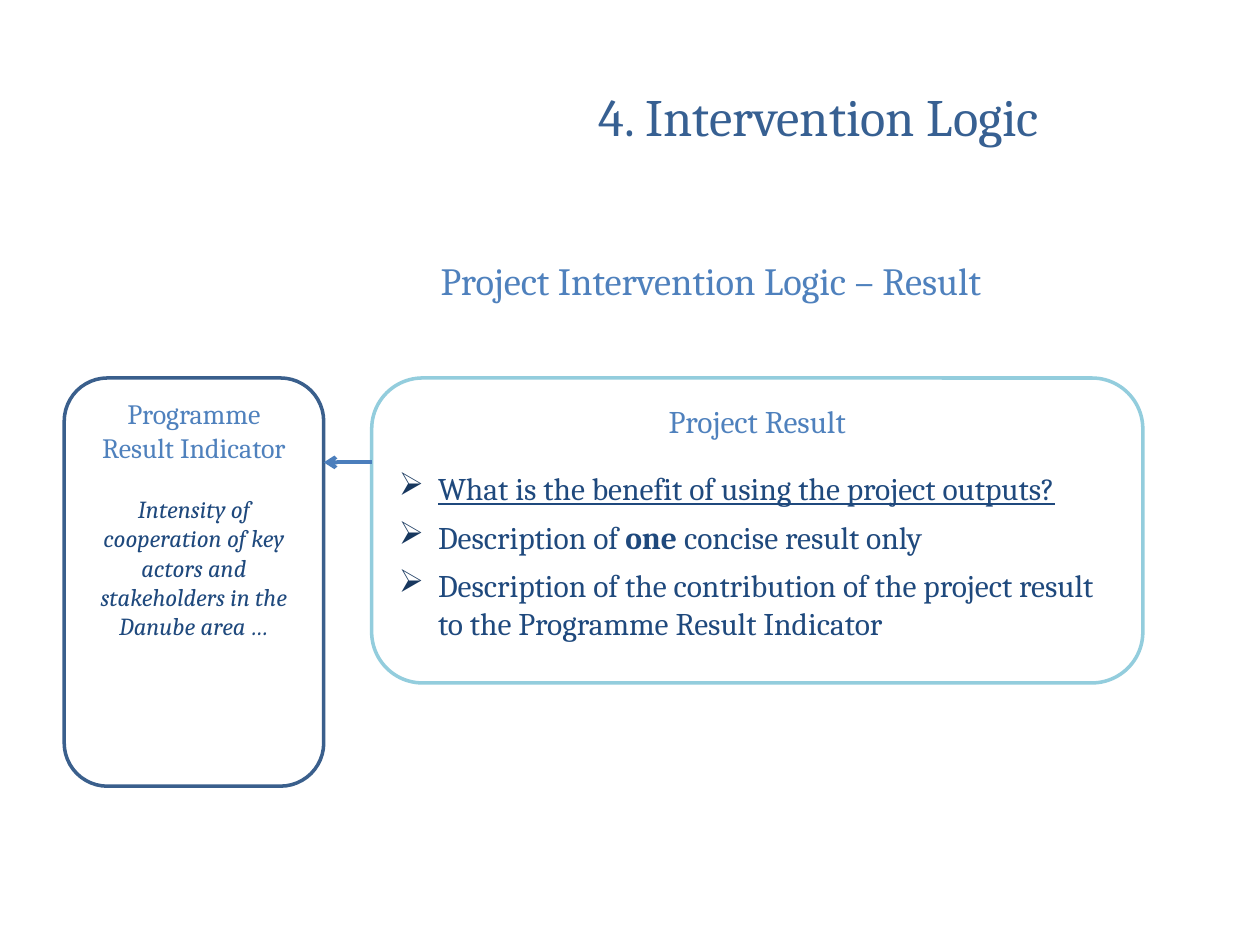
"""Build the Intervention Logic slide on project results."""
from lxml.etree import SubElement
from pptx import Presentation
from pptx.dml.color import RGBColor
from pptx.enum.shapes import MSO_CONNECTOR, MSO_SHAPE
from pptx.enum.text import MSO_ANCHOR, PP_ALIGN
from pptx.oxml.ns import qn
from pptx.util import Inches, Pt

WHITE = RGBColor(0xFF, 0xFF, 0xFF)
BLUE = RGBColor(0x4F, 0x81, 0xBD)
TITLE_BLUE = RGBColor(0x37, 0x60, 0x92)
NAVY = RGBColor(0x1F, 0x49, 0x7D)
INDICATOR_LINE = RGBColor(0x3A, 0x5F, 0x8C)
RESULT_LINE = RGBColor(0x93, 0xCD, 0xDD)
ARROW_BLUE = RGBColor(0x4B, 0x7E, 0xBC)
BULLET_COLOR = "17375E"


def add_span(para, text, size, color):
    span = para.add_run()
    span.text = text
    span.font.name = "Cambria"
    span.font.size = Pt(size)
    span.font.color.rgb = color
    return span


def add_panel(page, left, width, height, line_color):
    panel = page.shapes.add_shape(
        MSO_SHAPE.ROUNDED_RECTANGLE, Inches(left), Inches(3), Inches(width), Inches(height))
    panel.shadow.inherit = False
    panel.fill.solid()
    panel.fill.fore_color.rgb = WHITE
    tint = panel.fill._xPr.find(qn("a:solidFill"))[0]
    SubElement(tint, qn("a:alpha"), val="59000")
    panel.line.color.rgb = line_color
    panel.line.width = Pt(2)
    panel.text_frame.word_wrap = True
    panel.text_frame.vertical_anchor = MSO_ANCHOR.TOP
    return panel.text_frame


deck = Presentation()
deck.slide_width, deck.slide_height = Inches(10), Inches(7.5)
page = deck.slides.add_slide(deck.slide_layouts[6])

headings = [
    ("4. Intervention Logic", 3.76, 0.6, 5.48, 0.63, 30, TITLE_BLUE),
    ("Project Intervention Logic – Result ", 2.74, 1.99, 5.87, 0.47, 22, BLUE),
]
for text, left, top, width, height, size, color in headings:
    box = page.shapes.add_textbox(Inches(left), Inches(top), Inches(width), Inches(height))
    box.text_frame.word_wrap = True
    box.text_frame.vertical_anchor = MSO_ANCHOR.MIDDLE
    para = box.text_frame.paragraphs[0]
    para.alignment = PP_ALIGN.CENTER
    add_span(para, text, size, color)

indicator = add_panel(page, 0.51, 2.06, 3.24, INDICATOR_LINE)
para = indicator.paragraphs[0]
para.alignment = PP_ALIGN.CENTER
add_span(para, "Programme", 16, BLUE)
para = indicator.add_paragraph()
para.alignment = PP_ALIGN.CENTER
para.space_after = Pt(17)
add_span(para, "Result Indicator", 16, BLUE)
para = indicator.add_paragraph()
para.alignment = PP_ALIGN.CENTER
span = add_span(
    para, "Intensity of cooperation of key actors and stakeholders in the Danube area …", 14, NAVY)
span.font.italic = True

result = add_panel(page, 2.95, 6.12, 2.42, RESULT_LINE)
result.margin_top = Inches(0.07)
para = result.paragraphs[0]
para.alignment = PP_ALIGN.CENTER
para.space_after = Pt(17)
add_span(para, "Project Result", 18, BLUE)

bullets = [
    [("What is the benefit of using the project outputs?", "underline")],
    [("Description of ", ""), ("one", "bold"), (" concise result only", "")],
    [("Description of the contribution of the project result to the Programme Result Indicator", "")],
]
for spans in bullets:
    para = result.add_paragraph()
    para.alignment = PP_ALIGN.LEFT
    para.space_after = Pt(6)
    properties = para._p.get_or_add_pPr()
    properties.set("marL", str(Inches(0.31)))
    properties.set("indent", str(-Inches(0.31)))
    bullet_color = SubElement(properties, qn("a:buClr"))
    SubElement(bullet_color, qn("a:srgbClr"), val=BULLET_COLOR)
    SubElement(properties, qn("a:buSzPct"), val="101000")
    SubElement(properties, qn("a:buChar"), char="➢")
    for text, style in spans:
        span = add_span(para, text, 18, NAVY)
        span.font.underline = style == "underline"
        span.font.bold = style == "bold"

arrow = page.shapes.add_connector(
    MSO_CONNECTOR.STRAIGHT, Inches(2.95), Inches(3.67), Inches(2.57), Inches(3.67))
arrow.line.color.rgb = ARROW_BLUE
arrow.line.width = Pt(2.25)
SubElement(arrow.line._ln, qn("a:tailEnd"), type="arrow")
SubElement(arrow._element.spPr, qn("a:effectLst"))

deck.save("out.pptx")
